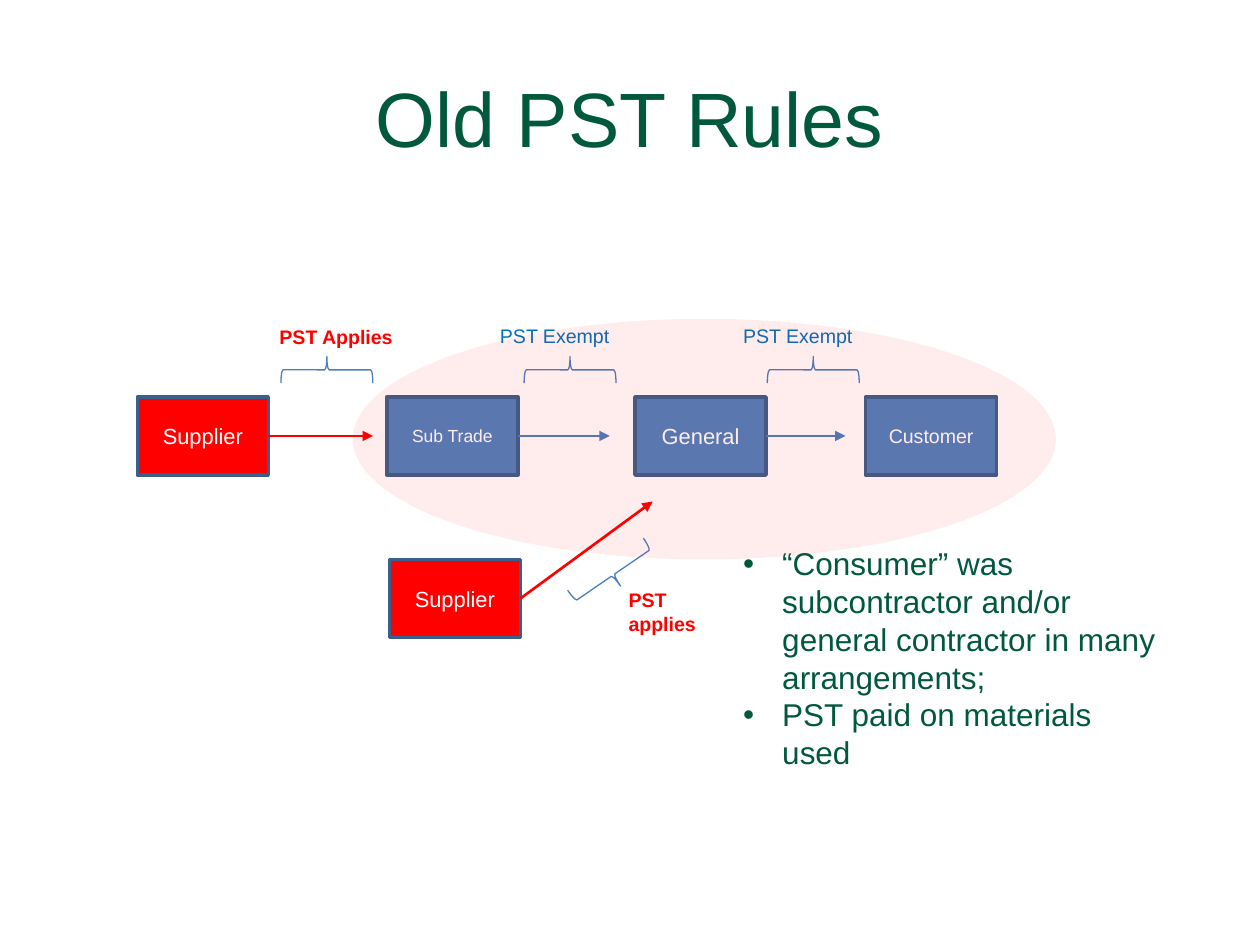
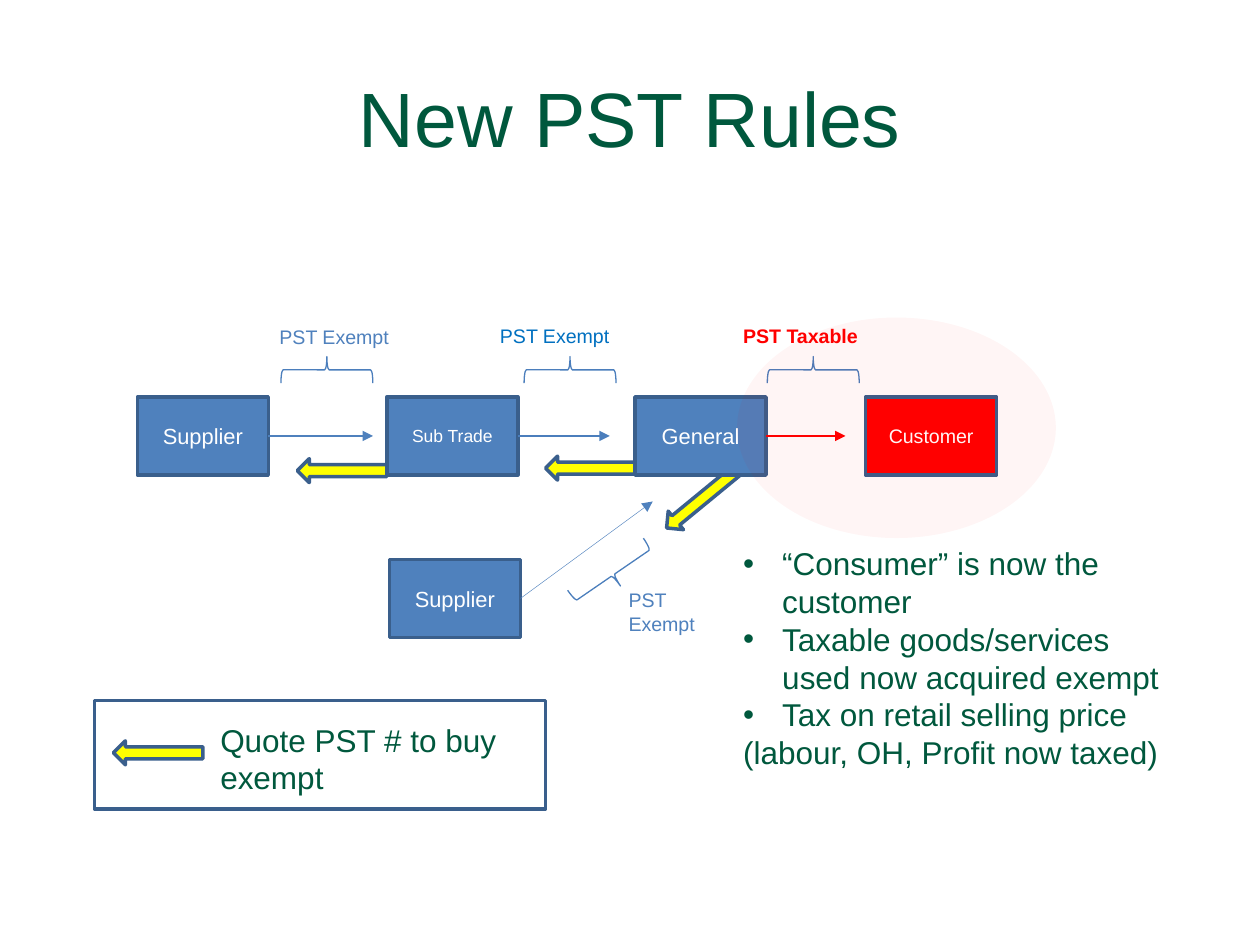
"""Build two slides comparing the old and the new PST rules."""
import lxml.etree
import pptx
import pptx.dml.color
import pptx.enum.dml
import pptx.enum.shapes
import pptx.enum.text
import pptx.oxml.ns
import pptx.util

Inches = pptx.util.Inches
Pt = pptx.util.Pt
qn = pptx.oxml.ns.qn
SHAPES = pptx.enum.shapes.MSO_SHAPE
ALIGN = pptx.enum.text.PP_ALIGN
ANCHOR = pptx.enum.text.MSO_ANCHOR

COLORS = {
    "green": "00583D",
    "red": "FF0000",
    "blue": "4F81BD",
    "outline": "3A5F8C",
    "thin_line": "4B7EBC",
    "label_blue": "0070C0",
    "yellow": "FFFF00",
    "white": "FFFFFF",
}
FONT = "Arial"
BOX_SIZE = (1.04, 0.62)
CHAIN = [("Supplier", 1.09, 12.5), ("Sub Trade", 3.07, 10),
         ("General", 5.04, 12.5), ("Customer", 6.87, 11.2)]
CHAIN_TOP = 3.15
CHAIN_MIDDLE = CHAIN_TOP + BOX_SIZE[1] / 2
CHAIN_ARROW_ENDS = [2.96, 4.84, 6.71]
BRACE_LEFT, BRACE_STEP = 2.49, 1.93
LABEL_PLACES = [(2.12, 2.53, 1.3, 0.29), (3.87, 2.52, 1.3, 0.29),
                (5.8, 2.52, 1.3, 0.29), (4.89, 4.62, 0.96, 0.48)]


def color(name):
    """Return a named colour as RGB."""
    return pptx.dml.color.RGBColor.from_string(COLORS[name])


def format_text(paragraph, size, color_name, bold=False, align=None):
    """Format the runs and alignment of a paragraph."""
    paragraph.alignment = align
    for run in paragraph.runs:
        run.font.name = FONT
        run.font.size = Pt(size)
        run.font.bold = bold
        run.font.color.rgb = color(color_name)


def add_title(slide, text):
    """Fill and place the slide title."""
    title = slide.shapes.title
    title.left, title.top = Inches(0.5), Inches(0.3)
    title.width, title.height = Inches(9), Inches(1.25)
    title.text_frame.text = text
    title.text_frame.vertical_anchor = ANCHOR.MIDDLE
    format_text(title.text_frame.paragraphs[0], 44, "green", align=ALIGN.CENTER)


def add_figure(slide, kind, place, fill=None, line=None, width=2, rotation=0):
    """Add a preset shape with its fill and line."""
    shape = slide.shapes.add_shape(kind, *map(Inches, place))
    shape.shadow.inherit = False
    shape.rotation = rotation
    if fill:
        shape.fill.solid()
        shape.fill.fore_color.rgb = color(fill)
    else:
        shape.fill.background()
    if line:
        shape.line.color.rgb = color(line)
        shape.line.width = Pt(width)
    else:
        shape.line.fill.background()
    return shape


def add_box(slide, text, left, top, size, fill):
    """Add one party of the supply chain."""
    box = add_figure(slide, SHAPES.RECTANGLE, (left, top, *BOX_SIZE), fill, "outline")
    box.text_frame.text = text
    box.text_frame.vertical_anchor = ANCHOR.MIDDLE
    format_text(box.text_frame.paragraphs[0], size, "white", align=ALIGN.CENTER)
    return box


def add_brace(slide, left, top, rotation):
    """Add a thin rotated brace."""
    add_figure(slide, SHAPES.RIGHT_BRACE, (left, top, 0.21, 0.73),
               line="thin_line", width=0.75, rotation=rotation)


def add_quote_arrow(slide, left, top, rotation=0):
    """Add a yellow block arrow for quoting the PST number."""
    add_figure(slide, SHAPES.LEFT_ARROW, (left, top, 0.71, 0.19),
               "yellow", "outline", rotation=rotation)


def add_flow_arrow(slide, box, end_x, end_y, color_name, width):
    """Add an arrow that leaves the right side of a box."""
    arrow = slide.shapes.add_connector(
        pptx.enum.shapes.MSO_CONNECTOR.STRAIGHT, box.left + box.width,
        box.top + box.height // 2, Inches(end_x), Inches(end_y))
    arrow.begin_connect(box, 3)
    arrow.line.color.rgb = color(color_name)
    arrow.line.width = Pt(width)
    lxml.etree.SubElement(arrow.line._get_or_add_ln(), qn("a:tailEnd"), type="triangle")
    lxml.etree.SubElement(arrow._element.spPr, qn("a:effectLst"))


def add_text(slide, paragraphs, place, size, color_name, bold=False, bullets=0):
    """Add a wrapping text box whose first paragraphs may have bullets."""
    text_box = slide.shapes.add_textbox(*map(Inches, place))
    frame = text_box.text_frame
    frame.word_wrap = True
    frame.auto_size = pptx.enum.text.MSO_AUTO_SIZE.SHAPE_TO_FIT_TEXT
    frame.text = "\n".join(paragraphs)
    for index, paragraph in enumerate(frame.paragraphs):
        if index < bullets:
            properties = paragraph._p.get_or_add_pPr()
            properties.set("marL", str(Inches(0.31)))
            properties.set("indent", str(-Inches(0.31)))
            lxml.etree.SubElement(properties, qn("a:buFont"), typeface=FONT)
            lxml.etree.SubElement(properties, qn("a:buChar"), char="•")
        format_text(paragraph, size, color_name, bold)


def add_highlight(slide, place, opacity):
    """Add a translucent red ellipse over the diagram."""
    ellipse = add_figure(slide, SHAPES.OVAL, place, "red")
    rgb = ellipse._element.spPr.find(".//" + qn("a:srgbClr"))
    lxml.etree.SubElement(rgb, qn("a:alpha"), val=str(opacity * 1000))


def add_diagram(slide, fills, arrows, labels):
    """Add the supply chain, with the second supplier last in each list."""
    boxes = [add_box(slide, text, left, CHAIN_TOP, size, fill)
             for (text, left, size), fill in zip(CHAIN, fills)]
    second_supplier = add_box(slide, "Supplier", 3.09, 4.44, 12.5, fills[-1])
    for index in range(3):
        add_brace(slide, BRACE_LEFT + index * BRACE_STEP, 2.57, 270)
    add_brace(slide, 4.76, 4.2, 55.5)
    ends = [(x, CHAIN_MIDDLE) for x in CHAIN_ARROW_ENDS] + [(5.18, 3.98)]
    for box, end, style in zip(boxes[:3] + [second_supplier], ends, arrows):
        add_flow_arrow(slide, box, *end, *style)
    for (text, color_name), place in zip(labels, LABEL_PLACES):
        add_text(slide, [text], place, 11.2, color_name, bold=color_name == "red")


def add_notes_list(slide, paragraphs, bullets):
    """Add the remarks at the lower right."""
    add_text(slide, paragraphs, (5.8, 4.27, 3.52, 1.92), 18, "green", bullets=bullets)


def add_legend(slide):
    """Add the framed key for the yellow arrows."""
    add_quote_arrow(slide, 0.9, 5.88)
    add_text(slide, ["Quote PST # to buy exempt"], (1.65, 5.67, 2.8, 0.71), 18, "green")
    add_figure(slide, SHAPES.RECTANGLE, (0.75, 5.56, 3.58, 0.86), line="outline")


def build_old_rules(slide):
    """Build the slide on the old rules."""
    add_title(slide, "Old PST Rules")
    taxed, exempt = ("red", 1.5), ("thin_line", 0.75)
    add_diagram(
        slide,
        ["red", "blue", "blue", "blue", "red"],
        [taxed, exempt, exempt, taxed],
        [("PST Applies", "red"), ("PST Exempt", "label_blue"),
         ("PST Exempt", "label_blue"), ("PST applies", "red")])
    add_notes_list(slide, [
        "“Consumer” was subcontractor and/or general contractor in many arrangements;",
        "PST paid on materials used"], bullets=2)
    add_highlight(slide, (2.8, 2.53, 5.58, 1.91), 7)


def build_new_rules(slide):
    """Build the slide on the new rules."""
    add_title(slide, "New PST Rules")
    add_quote_arrow(slide, 5.21, 3.87, 320.6)
    add_diagram(
        slide,
        ["blue", "blue", "blue", "red", "blue"],
        [("blue", 0.75), ("thin_line", 0.75), ("red", 1.5), ("blue", 0.25)],
        [("PST Exempt", "blue"), ("PST Exempt", "label_blue"),
         ("PST Taxable", "red"), ("PST Exempt", "blue")])
    add_notes_list(slide, [
        "“Consumer” is now the customer",
        "Taxable goods/services used now acquired exempt",
        "Tax on retail selling price",
        "(labour, OH, Profit now taxed)"], bullets=3)
    add_quote_arrow(slide, 2.36, 3.64)
    add_quote_arrow(slide, 4.33, 3.62)
    add_legend(slide)
    add_highlight(slide, (5.85, 2.52, 2.53, 1.75), 4)


def main():
    """Create and save the presentation."""
    presentation = pptx.Presentation()
    presentation.slide_width = Inches(10)
    presentation.slide_height = Inches(7.5)
    title_only = presentation.slide_layouts[5]
    for build in (build_old_rules, build_new_rules):
        build(presentation.slides.add_slide(title_only))
    presentation.save("out.pptx")


if __name__ == "__main__":
    main()
